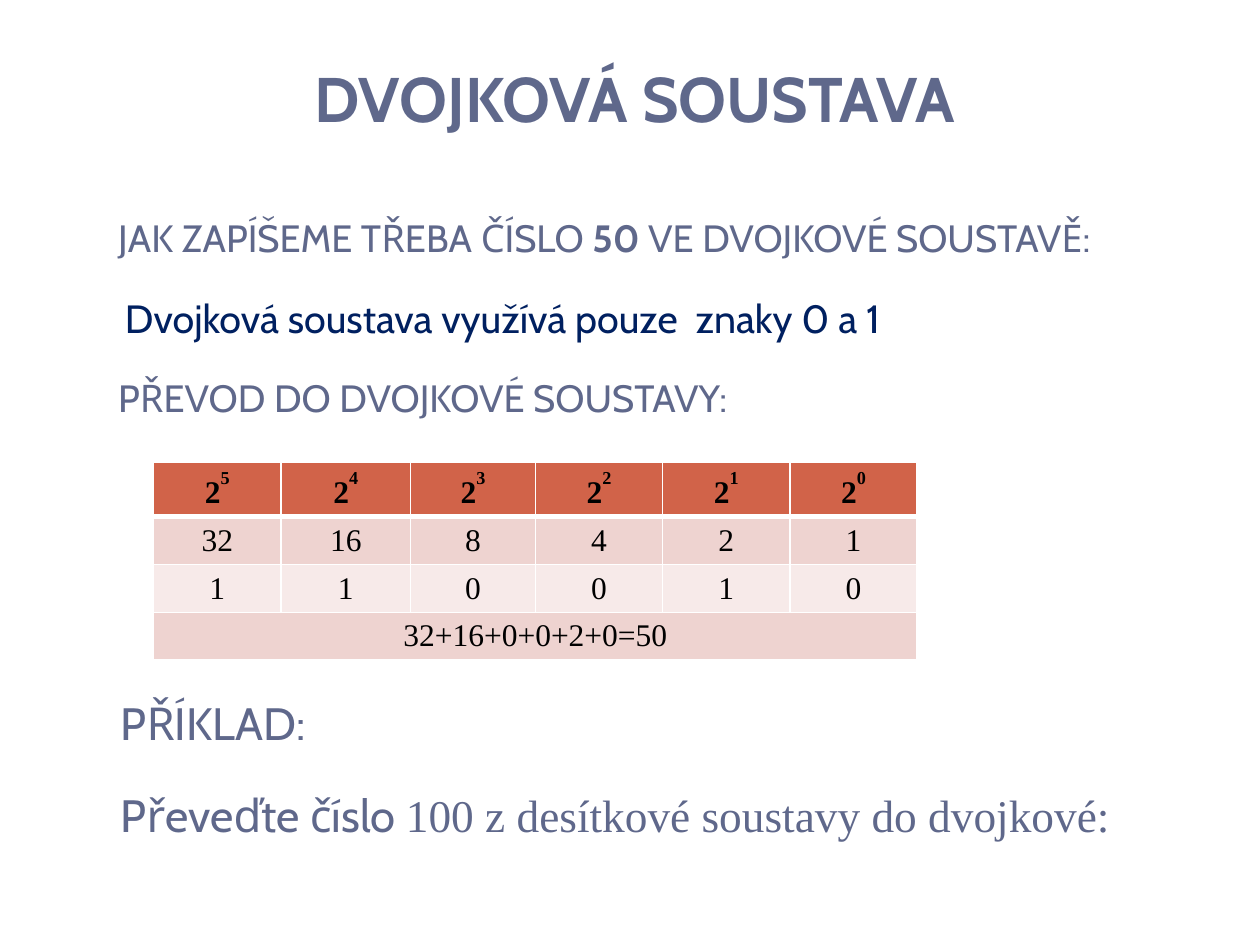
from typing import NamedTuple

from lxml import etree
from pptx import Presentation, util as u
from pptx.dml.color import RGBColor
from pptx.enum import text as t
from pptx.oxml import ns

SLATE = RGBColor(0x5F, 0x68, 0x8B)
NAVY = RGBColor(0x00, 0x20, 0x60)
BLACK = RGBColor(0, 0, 0)
WHITE = RGBColor(0xFF, 0xFF, 0xFF)
HEADER = RGBColor(0xD1, 0x63, 0x49)
ROSE = RGBColor(0xEE, 0xD3, 0xD0)
PALE = RGBColor(0xF7, 0xEA, 0xE9)
SANS, SERIF = "Cabin", "Times New Roman"


class Span(NamedTuple):
    text: str
    size: float
    color: RGBColor = SLATE
    font: str = SANS
    bold: bool = False
    raised: int = 0


class Block(NamedTuple):
    left: float
    top: float
    width: float
    height: float
    paragraphs: list[list[Span]]


TITLE = Block(0.43, 0.44, 9.21, 0.68, [[Span("DVOJKOVÁ SOUSTAVA", 36, bold=True)]])
BODY = Block(0.75, 1.47, 8.66, 1.97, [
    [Span("JAK ZAPÍŠEME TŘEBA ČÍSLO ", 21.7), Span("50", 21.7, bold=True),
     Span(" VE DVOJKOVÉ SOUSTAVĚ:", 21.7)],
    [Span(" ", 17.1, NAVY), Span("Dvojková soustava využívá pouze  znaky 0 a 1", 22.5, NAVY)],
    [Span("PŘEVOD DO DVOJKOVÉ SOUSTAVY:", 21.7)],
])
EXERCISE = Block(0.77, 5.25, 8.66, 1.5, [
    [Span("PŘÍKLAD:", 25.9)],
    [Span("Převeďte číslo ", 25.9),
     Span("100 z desítkové soustavy do dvojkové:", 25.9, font=SERIF)],
])
COLUMNS = [1.01, 1.03, 0.99, 1.01, 1.01, 1.01]
ROWS = [0.43, 0.38, 0.38, 0.38]
FILLS = [HEADER, ROSE, PALE, ROSE]
POWERS = range(5, -1, -1)
NUMBER = 50


def add_text(para, text: str, *, size: float, color: RGBColor, font: str = SANS,
             bold: bool = False, raised: int = 0) -> None:
    span = para.add_run()
    span.text = text
    span.font.size = u.Pt(size)
    span.font.color.rgb = color
    span.font.name = font
    span.font.bold = bold
    if raised:
        span.font._element.set("baseline", str(raised * 1000))


def add_block(page, block: Block, *, title: bool = False) -> None:
    box = page.shapes.add_textbox(*(u.Inches(length) for length in block[:4]))
    frame = box.text_frame
    frame.word_wrap = True
    frame.vertical_anchor = t.MSO_ANCHOR.BOTTOM if title else t.MSO_ANCHOR.TOP
    for index, spans in enumerate(block.paragraphs):
        para = frame.add_paragraph() if index else frame.paragraphs[0]
        if title:
            para.alignment = t.PP_ALIGN.CENTER
            para.line_spacing = u.Pt(20)
        else:
            para.line_spacing = 1.5
            para.space_before = u.Pt(6)
            para._p.get_or_add_pPr().set("marL", str(u.Inches(0.09)))
        for span in spans:
            add_text(para, **span._asdict())


def set_borders(cell, bottom: float) -> None:
    properties = cell._tc.get_or_add_tcPr()
    widths = {"lnL": 1, "lnR": 1, "lnT": 1, "lnB": bottom}
    for index, (side, width) in enumerate(widths.items()):
        line = etree.Element(ns.qn(f"a:{side}"), w=str(u.Pt(width)))
        fill = etree.SubElement(line, ns.qn("a:solidFill"))
        etree.SubElement(fill, ns.qn("a:srgbClr"), val=str(WHITE))
        properties.insert(index, line)


def add_powers_table(page) -> None:
    values = [2 ** power for power in POWERS]
    digits = [NUMBER // value % 2 for value in values]
    total = "+".join(str(value * digit) for value, digit in zip(values, digits))
    contents = [[("2", str(power)) for power in POWERS],
                [(str(value), "") for value in values],
                [(str(digit), "") for digit in digits],
                [(f"{total}={NUMBER}", "")]]
    table = page.shapes.add_table(len(ROWS), len(COLUMNS), u.Inches(1.22), u.Inches(3.67),
                                  u.Inches(sum(COLUMNS)), u.Inches(sum(ROWS))).table
    for column, width in zip(table.columns, COLUMNS):
        column.width = u.Inches(width)
    for row, height in zip(table.rows, ROWS):
        row.height = u.Inches(height)
    last = len(ROWS) - 1
    table.cell(last, 0).merge(table.cell(last, len(COLUMNS) - 1))
    for row, (entries, fill) in enumerate(zip(contents, FILLS)):
        heading = row == 0
        for column in range(len(COLUMNS)):
            cell = table.cell(row, column)
            cell.fill.solid()
            cell.fill.fore_color.rgb = fill
            set_borders(cell, 3 if heading else 1)
            cell.margin_top = cell.margin_bottom = u.Inches(0.04)
            cell.vertical_anchor = t.MSO_ANCHOR.MIDDLE
            if column < len(entries):
                para = cell.text_frame.paragraphs[0]
                para.alignment = t.PP_ALIGN.CENTER
                for text, raised in zip(entries[column], (0, 60)):
                    if text:
                        add_text(para, text, size=18, color=BLACK, font=SERIF,
                                 bold=heading, raised=raised)


def main() -> None:
    """Build the slide about the binary number system."""
    deck = Presentation()
    deck.slide_width, deck.slide_height = u.Inches(10), u.Inches(7.5)
    page = deck.slides.add_slide(deck.slide_layouts[6])
    add_block(page, TITLE, title=True)
    add_block(page, BODY)
    add_powers_table(page)
    add_block(page, EXERCISE)
    deck.save("out.pptx")


if __name__ == "__main__":
    main()
